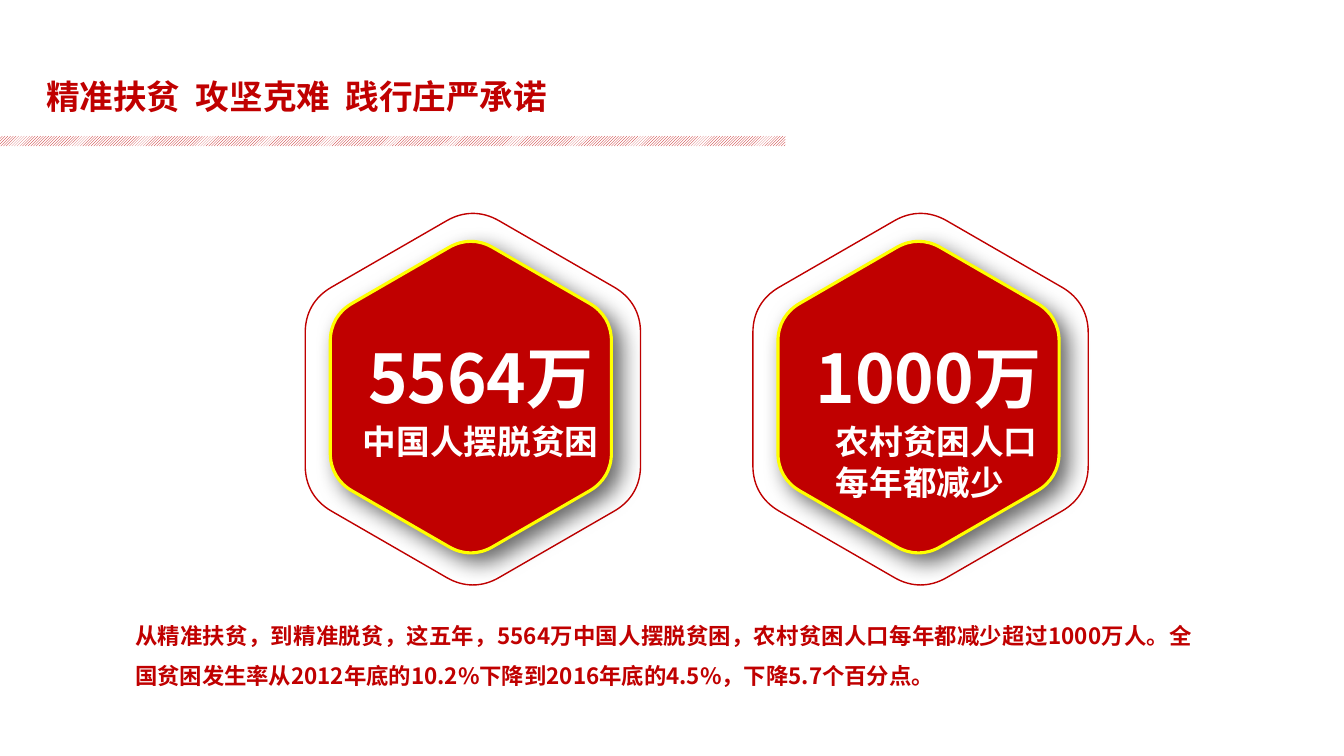
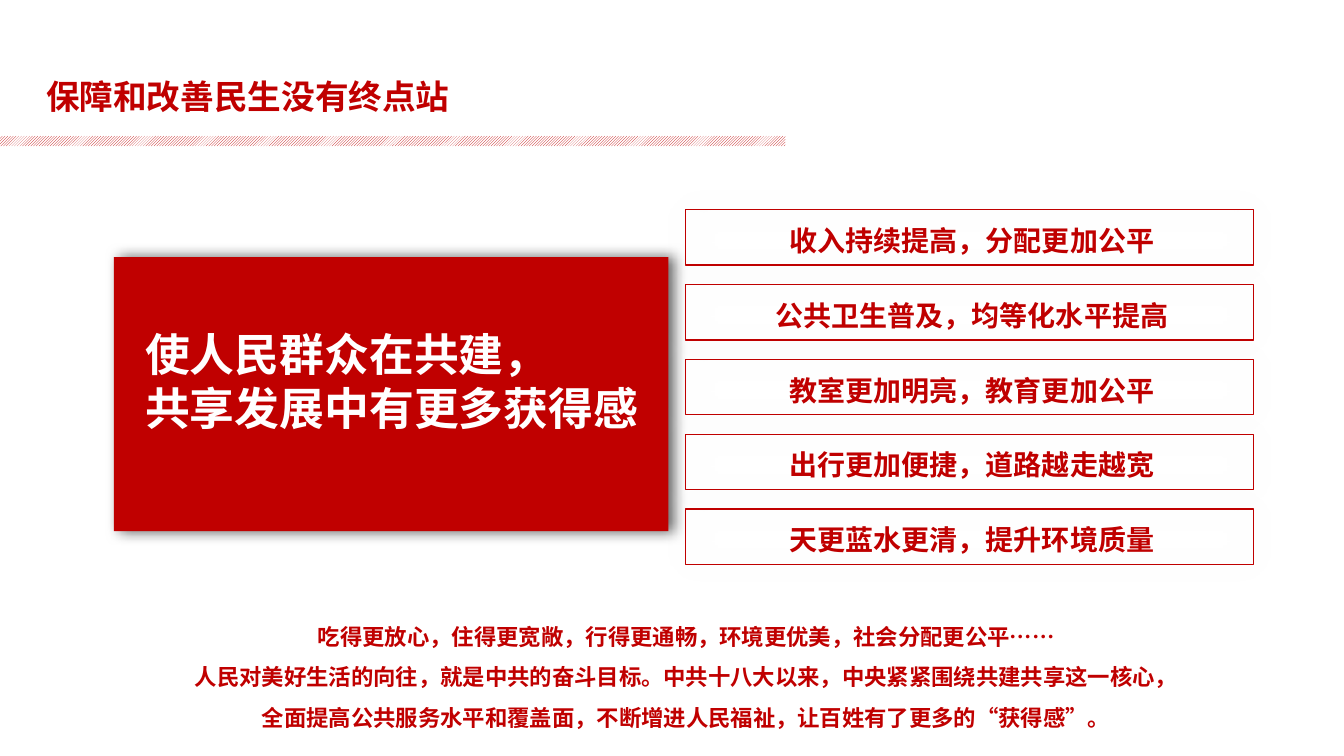
"""Build two slides on poverty relief and people's livelihood."""
import math
from dataclasses import dataclass

from lxml import etree
from pptx import Presentation
from pptx import util as u
from pptx.dml import color
from pptx.enum import dml, shapes, text
from pptx.oxml import ns


@dataclass(frozen=True)
class Theme:
    """Colours, font and type sizes shared by the slides."""

    red: color.RGBColor = color.RGBColor(0xC0, 0x00, 0x00)
    yellow: color.RGBColor = color.RGBColor(0xFF, 0xFF, 0x00)
    white: color.RGBColor = color.RGBColor(0xFF, 0xFF, 0xFF)
    font: str = "Noto Sans CJK SC"
    heading: int = 24
    figure: int = 48
    statement: int = 32
    row: int = 20
    body: int = 16
    thin_line: float = 1
    thick_line: float = 2.25


THEME = Theme()
WIDE_INSETS = (0.18, 0.09)
BODY_INSETS = (0.13, 0.07)
TITLE_INSETS = (0.1, 0.05)


def add_shadow(shape, opacity, blur, distance, angle):
    """Give a shape a black outer shadow."""
    effects = shape._element.spPr.find(ns.qn("a:effectLst"))
    shadow = etree.SubElement(
        effects,
        ns.qn("a:outerShdw"),
        blurRad=str(u.Pt(blur)),
        dist=str(u.Pt(distance)),
        dir=str(angle * 60000),
        algn="ctr",
        rotWithShape="0",
    )
    black = etree.SubElement(shadow, ns.qn("a:srgbClr"), val="000000")
    etree.SubElement(black, ns.qn("a:alpha"), val=str(opacity * 1000))


def style_shape(shape, fill=None, line=None, width=THEME.thin_line, shadow=None):
    """Set the fill, outline and shadow of a shape."""
    shape.shadow.inherit = False
    if fill is None:
        shape.fill.background()
    else:
        shape.fill.solid()
        shape.fill.fore_color.rgb = fill
    if line is None:
        shape.line.fill.background()
    else:
        shape.line.color.rgb = line
        shape.line.width = u.Pt(width)
    if shadow:
        add_shadow(shape, *shadow)


def add_preset(slide, preset, box, **style):
    """Add a styled preset shape at the given box in inches."""
    shape = slide.shapes.add_shape(preset, *(u.Inches(value) for value in box))
    style_shape(shape, **style)
    return shape


def add_text(slide, box, lines, size, ink, insets=BODY_INSETS, align=None, spacing=None):
    """Add a bold text box with one paragraph per line."""
    text_box = slide.shapes.add_textbox(*(u.Inches(value) for value in box))
    frame = text_box.text_frame
    frame.word_wrap = True
    frame.auto_size = text.MSO_AUTO_SIZE.SHAPE_TO_FIT_TEXT
    frame.margin_left = frame.margin_right = u.Inches(insets[0])
    frame.margin_top = frame.margin_bottom = u.Inches(insets[1])
    frame.text = "\n".join(lines)
    for paragraph in frame.paragraphs:
        paragraph.alignment = align
        paragraph.line_spacing = spacing
        for run in paragraph.runs:
            run.font.name = THEME.font
            run.font.size = u.Pt(size)
            run.font.bold = True
            run.font.color.rgb = ink
            properties = run.font._element
            etree.SubElement(properties, ns.qn("a:ea"), typeface=THEME.font)


def hexagon_points(center_x, center_y, radius):
    """Return entry, two controls and exit for each rounded hexagon corner."""
    vertices = [
        (
            center_x + radius * math.sin(math.radians(60 * i)),
            center_y - radius * math.cos(math.radians(60 * i)),
        )
        for i in range(6)
    ]
    cut, pull = 0.156, 0.35
    points = []
    for i, vertex in enumerate(vertices):
        before, after = vertices[i - 1], vertices[(i + 1) % 6]
        for neighbor, share in (
            (before, cut), (before, cut * pull), (after, cut * pull), (after, cut)
        ):
            points.append(
                tuple(u.Inches(v + share * (n - v)) for v, n in zip(vertex, neighbor))
            )
    return points


def add_hexagon(slide, center_x, center_y, radius, **style):
    """Add a styled hexagon whose corners are Bezier curves."""
    start, *others = hexagon_points(center_x, center_y, radius)
    builder = slide.shapes.build_freeform(*start)
    builder.add_line_segments(others, close=True)
    shape = builder.convert_to_shape()
    lines = list(shape._element.iter(ns.qn("a:lnTo")))
    for first in range(0, len(others), 4):
        curve = etree.Element(ns.qn("a:cubicBezTo"))
        lines[first].addprevious(curve)
        for line in lines[first:first + 3]:
            curve.append(line[0])
            line.getparent().remove(line)
    style_shape(shape, **style)


def add_badge(slide, center_x, figure, caption, caption_left):
    """Add a double hexagon with a figure and its caption."""
    add_hexagon(slide, center_x, 3.96, 1.92, line=THEME.red)
    add_hexagon(
        slide, center_x - 0.02, 3.94, 1.61, fill=THEME.red, line=THEME.yellow,
        width=THEME.thick_line, shadow=(60, 16, 8, 45),
    )
    add_text(slide, (center_x - 1.22, 3.25, 3.28, 0.99), [figure],
             THEME.figure, THEME.white, WIDE_INSETS)
    add_text(slide, (caption_left, 4.09, 3.28, 0.17 + 0.41 * len(caption)), caption,
             THEME.heading, THEME.white, WIDE_INSETS)


def add_layout_band(slide):
    """Put the hatched band on the layout that the slides share."""
    band = add_preset(slide, shapes.MSO_SHAPE.RECTANGLE, (-0.19, 1.35, 7.98, 0.1))
    band.fill.patterned()
    band.fill.pattern = dml.MSO_PATTERN.DARK_UPWARD_DIAGONAL
    band.fill.fore_color.rgb = THEME.red
    band.fill.back_color.rgb = THEME.white
    slide.slide_layout.shapes._spTree.append(band._element)


def add_titled_slide(presentation, title):
    """Add a blank slide with a title."""
    slide = presentation.slides.add_slide(presentation.slide_layouts[6])
    add_text(slide, (0.36, 0.75, 6.03, 0.5), [title], THEME.heading, THEME.red,
             TITLE_INSETS, spacing=0.9)
    return slide


def build_poverty_slide(presentation):
    """Build the slide with the two poverty figures."""
    slide = add_titled_slide(presentation, "精准扶贫  攻坚克难  践行庄严承诺")
    add_badge(slide, 4.69, "5564万", ["中国人摆脱贫困"], 3.42)
    add_badge(slide, 9.13, "1000万", ["农村贫困人口", "每年都减少"], 8.11)
    summary = (
        "从精准扶贫，到精准脱贫，这五年，5564万中国人摆脱贫困，"
        "农村贫困人口每年都减少超过1000万人。"
        "全国贫困发生率从2012年底的10.2%下降到2016年底的4.5%，下降5.7个百分点。"
    )
    add_text(slide, (1.21, 5.97, 10.74, 0.94), [summary], THEME.body, THEME.red,
             align=text.PP_ALIGN.JUSTIFY, spacing=1.5)
    return slide


def build_livelihood_slide(presentation):
    """Build the slide with the statement and five goals."""
    slide = add_titled_slide(presentation, "保障和改善民生没有终点站")
    add_preset(slide, shapes.MSO_SHAPE.RECTANGLE, (1.13, 2.55, 5.5, 2.72),
               fill=THEME.red, shadow=(60, 10, 4, 0))
    add_text(slide, (1.31, 3.17, 5.32, 1.21),
             ["使人民群众在共建，", "共享发展中有更多获得感"],
             THEME.statement, THEME.white)
    goals = [
        "收入持续提高，分配更加公平",
        "公共卫生普及，均等化水平提高",
        "教室更加明亮，教育更加公平",
        "出行更加便捷，道路越走越宽",
        "天更蓝水更清，提升环境质量",
    ]
    first_top, last_top = 2.08, 5.05
    pitch = (last_top - first_top) / (len(goals) - 1)
    for i, goal in enumerate(goals):
        top = first_top + i * pitch
        add_text(slide, (6.91, top - 0.1, 5.46, 0.64), [goal], THEME.row, THEME.red,
                 align=text.PP_ALIGN.CENTER, spacing=1.5)
        frame = add_preset(slide, shapes.MSO_SHAPE.ROUNDED_RECTANGLE,
                           (6.8, top, 5.63, 0.55), line=THEME.red,
                           shadow=(11, 22, 0, 0))
        frame.adjustments[0] = 0
    closing = [
        "吃得更放心，住得更宽敞，行得更通畅，环境更优美，社会分配更公平……",
        "人民对美好生活的向往，就是中共的奋斗目标。中共十八大以来，中央紧紧围绕共建共享这一核心，",
        "全面提高公共服务水平和覆盖面，不断增进人民福祉，让百姓有了更多的“获得感”。",
    ]
    add_text(slide, (1.72, 5.98, 10.18, 1.35), closing, THEME.body, THEME.red,
             align=text.PP_ALIGN.CENTER, spacing=1.5)


def main():
    """Build and save the presentation."""
    presentation = Presentation()
    presentation.slide_width = u.Inches(13.33)
    presentation.slide_height = u.Inches(7.5)
    poverty_slide = build_poverty_slide(presentation)
    add_layout_band(poverty_slide)
    build_livelihood_slide(presentation)
    presentation.save("out.pptx")


if __name__ == "__main__":
    main()
